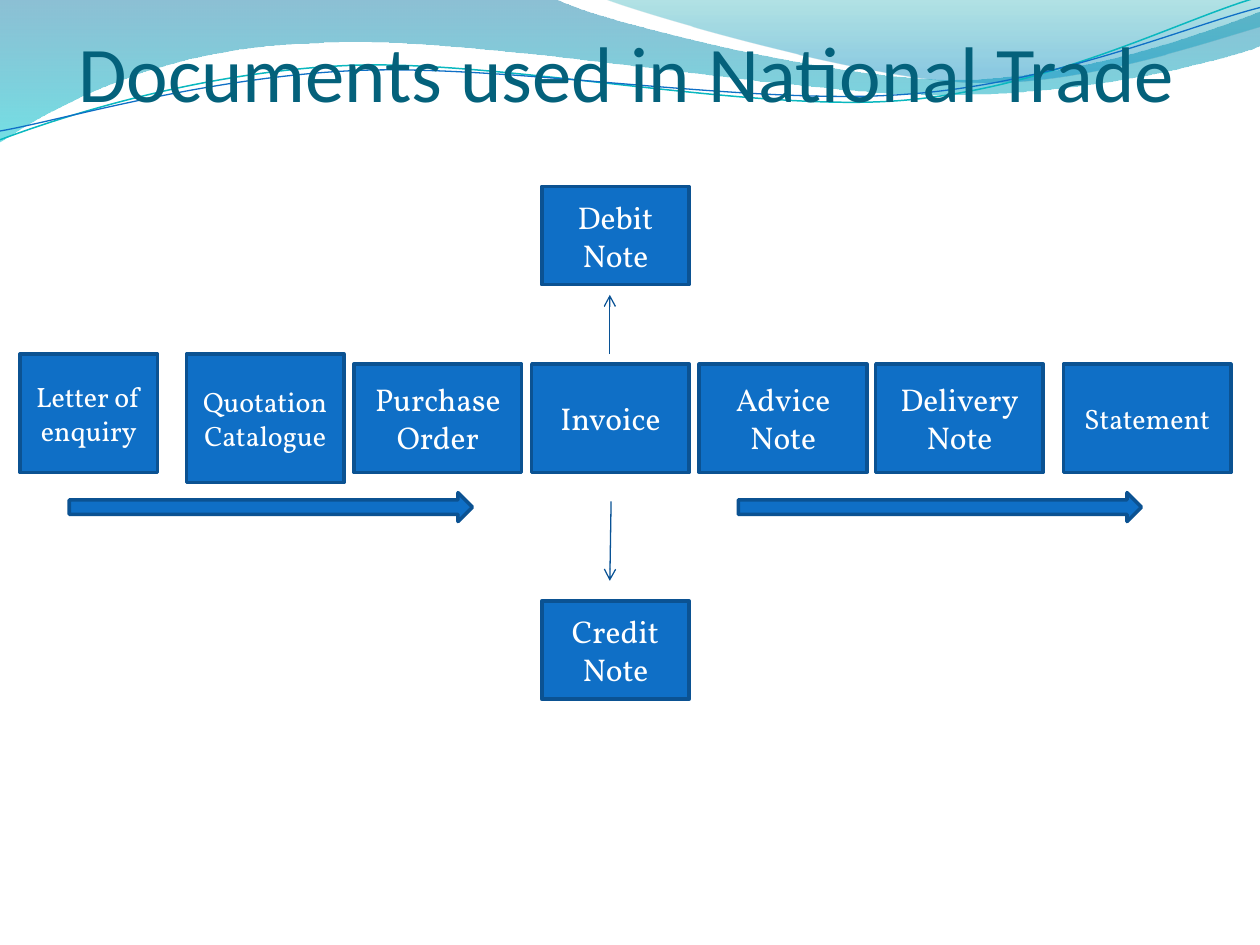
"""Build a slide showing the flow of documents used in national trade."""
import pptx
import pptx.dml.color
import pptx.enum.shapes
import pptx.enum.text
import pptx.oxml
import pptx.oxml.ns
import pptx.util

THEME = {
    "title_font": "Calibri", "title_size": 45, "title": "04617B",
    "box_font": "Vollkorn", "large": 18, "small": 16, "box_text": "FFFFFF",
    "fill": "0F6FC6", "border": "0B5292", "border_width": 2,
    "link": "095295", "link_width": 0.75,
}
TITLE = ("Documents used in National Trade", 0.47, 0, 9, 0.94)

ROW_BOTTOM = 3.75
ROW = [
    ("Letter of enquiry", 0.16, 1.09, 0.94, 0, "small"),
    ("Quotation\nCatalogue", 1.48, 1.25, 1.02, 0.08, "small"),
    ("Purchase Order", 2.81, 1.33, 0.86, 0, "large"),
    ("Invoice", 4.22, 1.25, 0.86, 0, "large"),
    ("Advice Note", 5.55, 1.33, 0.86, 0, "large"),
    ("Delivery\nNote", 6.95, 1.33, 0.86, 0, "large"),
    ("Statement", 8.44, 1.33, 0.86, 0, "small"),
]
NOTES = [("Debit\nNote", 1.48), ("Credit\nNote", 4.77)]
NOTE_LEFT, NOTE_WIDTH, NOTE_HEIGHT = 4.3, 1.17, 0.78
ARROW_LEFTS = (0.55, 5.86)
ARROW_TOP, ARROW_WIDTH, ARROW_HEIGHT = 3.91, 3.2, 0.23
LINKS = [(4.85, 3.98, 4.84, 4.61), (4.84, 2.81, 4.84, 2.34)]

BANDS = [
    ([(0, 0), (4.4, -0.01), (4.76, 0.17, 6.64, 0.63, 7.58, 0.63),
      (8.53, 0.63, 9.58, 0.26, 10, 0.09), (10.01, 0.36),
      (9.83, 0.44, 8.7, 0.76, 7.46, 0.75), (6.22, 0.75, 3.82, 0.28, 2.57, 0.34),
      (1.29, 0.36, 0.46, 0.83, -0.01, 1.13), (0, 0)],
     [(0, "0074A1", 45), (1, "00C6CF", 55)]),
    ([(4.79, -0.01), (5.09, 0.11, 6.82, 0.62, 7.69, 0.65),
      (8.56, 0.69, 9.61, 0.32, 10, 0.21), (10, 0), (4.79, -0.01)],
     [(0, "00A1A9", 30), (0.8, "008BBF", 45)]),
]
WAVES = [
    ([(0, 1.11), (0.48, 0.93, 1.58, 0.57, 2.77, 0.52),
      (3.95, 0.47, 5.93, 0.89, 7.13, 0.8), (8.33, 0.71, 9.38, 0.15, 9.98, -0.02)],
     "0AB8BF", 0.85),
    ([(0, 1.04), (0.47, 0.96, 1.64, 0.61, 2.83, 0.56),
      (4.03, 0.51, 5.97, 0.84, 7.17, 0.75), (8.36, 0.67, 9.41, 0.21, 10, 0.06)],
     "0F6FC6", 0.75),
]


def lengths(*values):
    return [pptx.util.Cm(value * 2.54) for value in values]


def color(code):
    return pptx.dml.color.RGBColor.from_string(code)


def element(tag, attributes=""):
    names = pptx.oxml.ns.nsdecls("a")
    return pptx.oxml.parse_xml(f"<a:{tag} {names} {attributes}/>")


def set_line(line, code, width):
    line.color.rgb = color(code)
    line.width = pptx.util.Pt(width)


def write(shape, text, font, size, code, anchor):
    frame = shape.text_frame
    frame.text = text
    frame.word_wrap = True
    frame.vertical_anchor = anchor
    for para in frame.paragraphs:
        para.alignment = pptx.enum.text.PP_ALIGN.CENTER
        for span in para.runs:
            span.font.name = font
            span.font.size = pptx.util.Pt(size)
            span.font.color.rgb = color(code)


def add_outline(page, segments, close):
    points = [lengths(*segment[i:i + 2])
              for segment in segments for i in range(0, len(segment), 2)]
    builder = page.shapes.build_freeform(*points[0])
    builder.add_line_segments(points[1:], close=close)
    shape = builder.convert_to_shape()
    shape.shadow.inherit = False
    steps = iter(list(shape._element.spPr.iter(pptx.oxml.ns.qn("a:lnTo"))))
    for segment in segments[1:]:
        group = [next(steps) for _ in range(len(segment) // 2)]
        if len(group) == 3:
            curve = element("cubicBezTo")
            group[0].addprevious(curve)
            for step in group:
                curve.append(step[0])
                step.getparent().remove(step)
    return shape


def add_band(page, segments, stops):
    shape = add_outline(page, segments, True)
    shape.line.fill.background()
    shape.fill.gradient()
    shape.fill.gradient_angle = 270
    for stop, (position, code, _) in zip(shape.fill.gradient_stops, stops):
        stop.position = position
        stop.color.rgb = color(code)
    tag = pptx.oxml.ns.qn("a:srgbClr")
    for tint, (_, _, opacity) in zip(shape._element.spPr.iter(tag), stops):
        tint.append(element("alpha", f'val="{opacity * 1000}"'))


def add_wave(page, segments, code, width):
    shape = add_outline(page, segments, False)
    shape.fill.background()
    set_line(shape.line, code, width)


def add_solid(page, kind, left, top, width, height):
    shape = page.shapes.add_shape(kind, *lengths(left, top, width, height))
    shape.shadow.inherit = False
    shape.fill.solid()
    shape.fill.fore_color.rgb = color(THEME["fill"])
    set_line(shape.line, THEME["border"], THEME["border_width"])
    return shape


def add_box(page, text, left, top, width, height, size):
    box = add_solid(page, pptx.enum.shapes.MSO_SHAPE.RECTANGLE, left, top, width, height)
    write(box, text, THEME["box_font"], THEME[size], THEME["box_text"],
          pptx.enum.text.MSO_ANCHOR.MIDDLE)


def add_title(page, text, *place):
    box = page.shapes.add_textbox(*lengths(*place))
    frame = box.text_frame
    frame.margin_left = frame.margin_right = frame.margin_bottom = 0
    frame.margin_top = pptx.util.Cm(0.13)
    write(box, text, THEME["title_font"], THEME["title_size"], THEME["title"],
          pptx.enum.text.MSO_ANCHOR.BOTTOM)


def add_link(page, *ends):
    link = page.shapes.add_connector(
        pptx.enum.shapes.MSO_CONNECTOR.STRAIGHT, *lengths(*ends))
    set_line(link.line, THEME["link"], THEME["link_width"])
    link.line._get_or_add_ln().append(element("tailEnd", 'type="arrow"'))
    link._element.spPr.append(element("effectLst"))


def main():
    deck = pptx.Presentation()
    deck.slide_width, deck.slide_height = lengths(10, 7.5)
    page = deck.slides.add_slide(deck.slide_layouts[6])
    for band in BANDS:
        add_band(page, *band)
    for wave in WAVES:
        add_wave(page, *wave)
    add_title(page, *TITLE)
    for text, left, width, height, drop, size in ROW:
        add_box(page, text, left, ROW_BOTTOM + drop - height, width, height, size)
    for text, top in NOTES:
        add_box(page, text, NOTE_LEFT, top, NOTE_WIDTH, NOTE_HEIGHT, "large")
    for left in ARROW_LEFTS:
        add_solid(page, pptx.enum.shapes.MSO_SHAPE.RIGHT_ARROW,
                  left, ARROW_TOP, ARROW_WIDTH, ARROW_HEIGHT)
    for link in LINKS:
        add_link(page, *link)
    deck.save("out.pptx")


if __name__ == "__main__":
    main()
